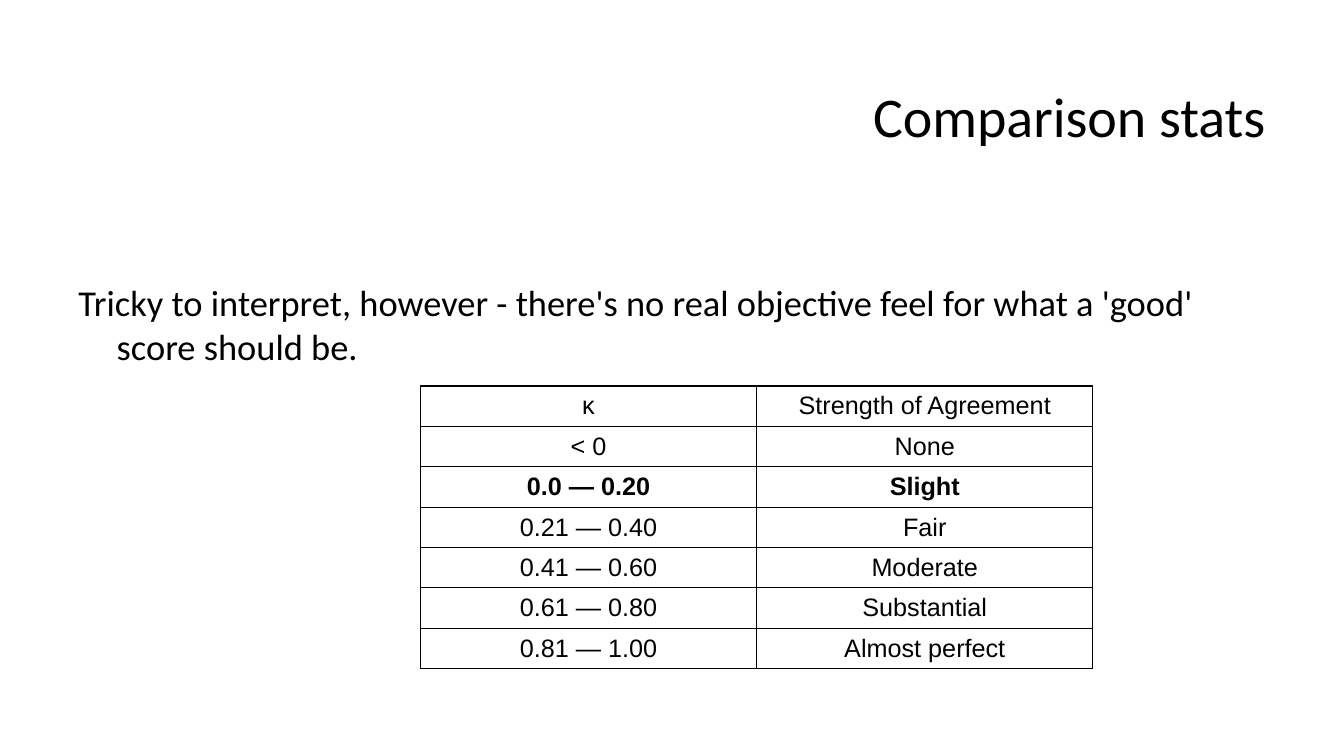
from dataclasses import dataclass

from lxml import etree
from pptx import Presentation
from pptx.dml.color import RGBColor
from pptx.enum.text import MSO_ANCHOR, PP_ALIGN
from pptx.oxml.ns import qn
from pptx.util import Inches, Pt

MIDDLE, TOP = MSO_ANCHOR.MIDDLE, MSO_ANCHOR.TOP
CENTER, LEFT, RIGHT = PP_ALIGN.CENTER, PP_ALIGN.LEFT, PP_ALIGN.RIGHT


@dataclass(frozen=True)
class Theme:
    ink: RGBColor = RGBColor(0, 0, 0)
    text_font: str = "Calibri"
    table_font: str = "Arial"
    title_size: int = 40
    body_size: int = 26
    table_size: int = 18
    border_width: int = 1


theme = Theme()


def format_paragraph(paragraph, font_name, size, alignment, bold=False):
    paragraph.alignment = alignment
    paragraph.font.name = font_name
    paragraph.font.size = Pt(size)
    paragraph.font.bold = bold
    paragraph.font.color.rgb = theme.ink


def add_borders(cell):
    properties = cell._tc.get_or_add_tcPr()
    for position, side in enumerate(("a:lnL", "a:lnR", "a:lnT", "a:lnB")):
        line = etree.Element(qn(side), w=str(Pt(theme.border_width)))
        fill = etree.SubElement(line, qn("a:solidFill"))
        etree.SubElement(fill, qn("a:srgbClr"), val=str(theme.ink))
        properties.insert(position, line)


presentation = Presentation()
presentation.slide_width = Inches(13.33)
presentation.slide_height = Inches(7.5)
slide = presentation.slides.add_slide(presentation.slide_layouts[5])

title = slide.shapes.title
title.left, title.top = Inches(4.15), Inches(0.52)
title.width, title.height = Inches(8.5), Inches(1.25)
title.text_frame.text = "Comparison stats"
title.text_frame.vertical_anchor = MIDDLE
format_paragraph(title.text_frame.paragraphs[0], theme.text_font, theme.title_size, RIGHT)

body = slide.shapes.add_textbox(Inches(0.68), Inches(2.73), Inches(11.5), Inches(0.62))
body.text_frame.word_wrap = True
body.text_frame.vertical_anchor = TOP
body.text_frame.text = (
    "Tricky to interpret, however - there's no real objective feel "
    "for what a 'good' score should be."
)
paragraph = body.text_frame.paragraphs[0]
format_paragraph(paragraph, theme.text_font, theme.body_size, LEFT)
paragraph_properties = paragraph._p.get_or_add_pPr()
paragraph_properties.set("marL", str(Inches(0.38)))
paragraph_properties.set("indent", str(Inches(-0.38)))

agreement_rows = [
    ("κ", "Strength of Agreement"),
    ("< 0", "None"),
    ("0.0 — 0.20", "Slight"),
    ("0.21 — 0.40", "Fair"),
    ("0.41 — 0.60", "Moderate"),
    ("0.61 — 0.80", "Substantial"),
    ("0.81 — 1.00", "Almost perfect"),
]
highlighted_strength = "Slight"
row_height = 0.4

table = slide.shapes.add_table(
    len(agreement_rows), 2, Inches(4.17), Inches(3.83),
    Inches(6.67), Inches(row_height * len(agreement_rows)),
).table
table.first_row = False
table.horz_banding = False

for row_index, row in enumerate(agreement_rows):
    table.rows[row_index].height = Inches(row_height)
    for column_index, text in enumerate(row):
        cell = table.cell(row_index, column_index)
        cell.text = text
        cell.vertical_anchor = MIDDLE
        cell.fill.background()
        format_paragraph(
            cell.text_frame.paragraphs[0], theme.table_font, theme.table_size,
            CENTER, bold=highlighted_strength in row,
        )
        add_borders(cell)

presentation.save("out.pptx")
